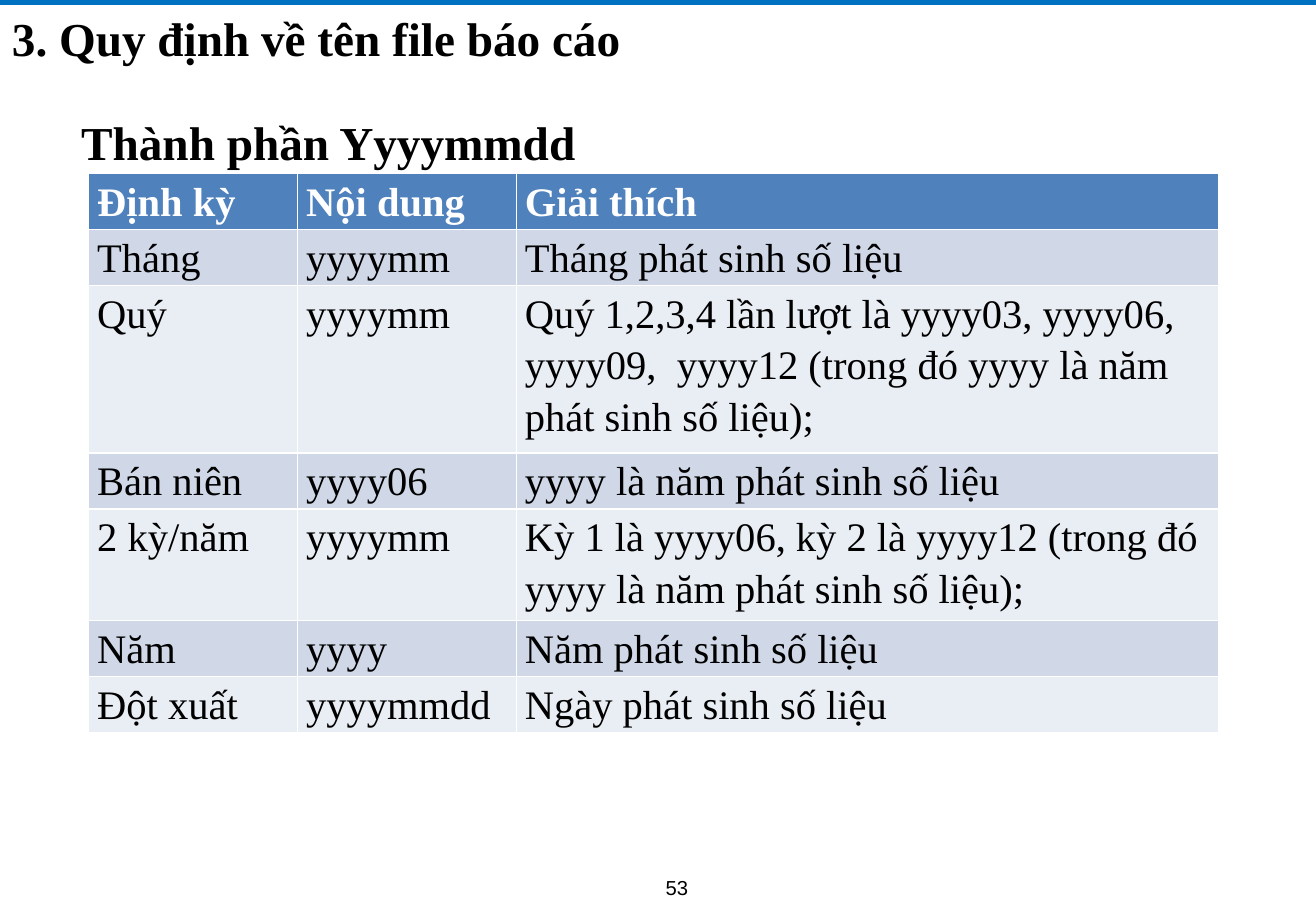
from pptx import Presentation
from pptx.dml.color import RGBColor as RGB
from pptx.enum.shapes import MSO_SHAPE as Shape
from pptx.enum.text import MSO_ANCHOR as Anchor, PP_ALIGN as Align
from pptx.util import Inches, Pt

HUE = {
    "bar": "0070C0", "text": "000000", "white": "FFFFFF",
    "head": "4F81BD", "odd": "D0D8E8", "even": "E9EDF4",
}
SERIF = "Times New Roman"


def style(para, size, hue="text", bold=False, name=SERIF):
    font = para.font
    font.name, font.size, font.bold = name, Pt(size), bold
    font.color.rgb = RGB.from_string(HUE[hue])


def label(text, left, top, width, height):
    box = slide.shapes.add_textbox(
        Inches(left), Inches(top), Inches(width), Inches(height))
    frame = box.text_frame
    frame.word_wrap = True
    frame.vertical_anchor = Anchor.MIDDLE
    frame.margin_top = frame.margin_bottom = 0
    frame.text = text
    return frame.paragraphs[0]


deck = Presentation()
deck.slide_width, deck.slide_height = Inches(10.83), Inches(7.5)
slide = deck.slides.add_slide(deck.slide_layouts[6])

# Top bar
bar = slide.shapes.add_shape(
    Shape.RECTANGLE, 0, Inches(-0.01), Inches(10.84), Inches(0.05))
bar.shadow.inherit = False
bar.fill.solid()
bar.fill.fore_color.rgb = RGB.from_string(HUE["bar"])
bar.line.fill.background()

# Headings and page number
style(label("3. Quy định về tên file báo cáo", 0, 0, 10.42, 0.62), 28, bold=True)
style(label("Thành phần Yyyymmdd", 0.57, 0.9, 9.77, 0.53), 28, bold=True)
page = label("53", 4.47, 7.18, 2.2, 0.26)
page.alignment = Align.CENTER
style(page, 12, name="Arial")

# Table of file name rules: row height in text lines, then the cells
rows = [
    (1, "Định kỳ", "Nội dung", "Giải thích"),
    (1, "Tháng", "yyyymm", "Tháng phát sinh số liệu"),
    (3, "Quý", "yyyymm", "Quý 1,2,3,4 lần lượt là yyyy03, yyyy06, "
     "yyyy09,  yyyy12 (trong đó yyyy là năm phát sinh số liệu);"),
    (1, "Bán niên", "yyyy06", "yyyy là năm phát sinh số liệu"),
    (2, "2 kỳ/năm", "yyyymm", "Kỳ 1 là yyyy06, kỳ 2 là yyyy12 "
     "(trong đó yyyy là năm phát sinh số liệu);"),
    (1, "Năm", "yyyy", "Năm phát sinh số liệu"),
    (1, "Đột xuất", "yyyymmdd", "Ngày phát sinh số liệu"),
]
grid = slide.shapes.add_table(
    len(rows), 3, Inches(0.73), Inches(1.43), Inches(9.3), Inches(4.6)).table
for col, width in zip(grid.columns, (1.72, 1.8, 5.78)):
    col.width = Inches(width)

for r, (lines, *texts) in enumerate(rows):
    grid.rows[r].height = Inches(0.46 * lines)
    fill = "head" if r == 0 else "odd" if r % 2 else "even"
    for c, text in enumerate(texts):
        cell = grid.cell(r, c)
        cell.margin_left = cell.margin_right = Inches(0.07)
        cell.margin_top = cell.margin_bottom = 0
        cell.fill.solid()
        cell.fill.fore_color.rgb = RGB.from_string(HUE[fill])
        cell.text = text
        para = cell.text_frame.paragraphs[0]
        para.line_spacing = 1.15
        style(para, 24, "text" if r else "white", bold=r == 0)

deck.save("out.pptx")
